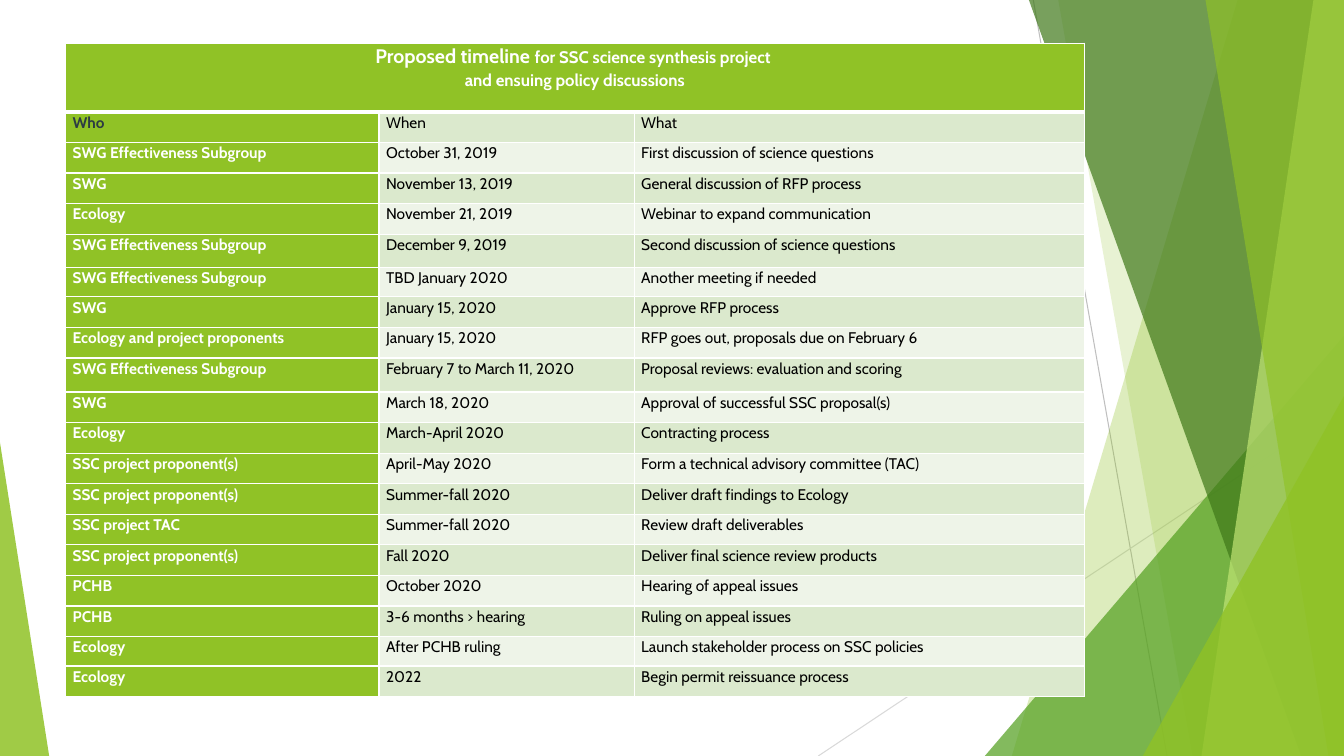
"""Build the project timeline slide: a schedule table over green facets."""
from lxml.etree import SubElement
from pptx import Presentation
from pptx.dml.color import RGBColor
from pptx.enum.shapes import MSO_CONNECTOR, MSO_SHAPE
from pptx.enum.text import PP_ALIGN
from pptx.oxml.ns import qn
from pptx.util import Cm, Pt

FONT = "Cabin"
WHITE = RGBColor(0xFF, 0xFF, 0xFF)
BLACK = RGBColor(0x00, 0x00, 0x00)
SLATE = RGBColor(0x2C, 0x3C, 0x43)
LIME = RGBColor(0x90, 0xC2, 0x26)
LEAF = RGBColor(0x54, 0xA0, 0x21)
FOREST = RGBColor(0x3F, 0x78, 0x19)
PALE_LIME = RGBColor(0xC0, 0xE4, 0x74)
BAND_DARK = RGBColor(0xDB, 0xE9, 0xCD)
BAND_LIGHT = RGBColor(0xEE, 0xF4, 0xE8)
GRAY = RGBColor(0xBF, 0xBF, 0xBF)
LIGHT_GRAY = RGBColor(0xD9, 0xD9, 0xD9)

HEADING = [
    ("Proposed timeline ", 14),
    ("for SSC science synthesis project ", 12),
    ("and ensuing policy discussions", 12),
]
SCHEDULE = [
    ("Who", "When", "What"),
    ("SWG Effectiveness Subgroup", "October 31, 2019", "First discussion of science questions"),
    ("SWG", "November 13, 2019", "General discussion of RFP process"),
    ("Ecology", "November 21, 2019", "Webinar to expand communication"),
    ("SWG Effectiveness Subgroup", "December 9, 2019", "Second discussion of science questions"),
    ("SWG Effectiveness Subgroup", "TBD January 2020", "Another meeting if needed"),
    ("SWG", "January 15, 2020", "Approve RFP process"),
    ("Ecology and project proponents", "January 15, 2020", "RFP goes out, proposals due on February 6"),
    ("SWG Effectiveness Subgroup", "February 7 to March 11, 2020", "Proposal reviews: evaluation and scoring"),
    ("SWG", "March 18, 2020", "Approval of successful SSC proposal(s)"),
    ("Ecology", "March-April 2020", "Contracting process"),
    ("SSC project proponent(s)", "April-May 2020", "Form a technical advisory committee (TAC)"),
    ("SSC project proponent(s)", "Summer-fall 2020", "Deliver draft findings to Ecology"),
    ("SSC project TAC", "Summer-fall 2020", "Review draft deliverables"),
    ("SSC project proponent(s)", "Fall 2020", "Deliver final science review products"),
    ("PCHB", "October 2020", "Hearing of appeal issues"),
    ("PCHB", "3-6 months > hearing", "Ruling on appeal issues"),
    ("Ecology", "After PCHB ruling", "Launch stakeholder process on SSC policies"),
    ("Ecology", "2022", "Begin permit reissuance process"),
]
WIDTH, HEIGHT = 33.87, 19.05
COLUMN_WIDTHS = (7.9, 6.43, 11.35)
ROW_HEIGHT = 0.77
SPECIAL_HEIGHTS = {0: 1.73, 5: 0.84, 6: 0.74, 9: 0.86, 18: 0.74}

RAYS = [
    ((26.04, 0), (29.41, HEIGHT), GRAY),
    ((WIDTH, 10.24), (20.62, HEIGHT), LIGHT_GRAY),
]
# Facets run from a top x and a bottom x to the right edge; triangles list left, top, apex.
FACETS = [
    ("facet", (31.19, 25.5), LIME, 30),
    ("facet", (26.67, 30.05), LIME, 20),
    ("triangle", (24.82, 8.46, 9.05, 1), LEAF, 72),
    ("facet", (25.93, 32.79), FOREST, 70),
    ("facet", (33.1, 30.28), PALE_LIME, 70),
    ("facet", (30.38, 33.48), LIME, 65),
    ("triangle", (28.8, 9.98, 5.07, 1), LIME, 80),
    ("triangle", (0, 11.15, 1.24, 0), LIME, 85),
]


def add_ray(slide, start, end, color):
    ray = slide.shapes.add_connector(MSO_CONNECTOR.STRAIGHT, *map(Cm, start + end))
    ray.line.color.rgb = color
    ray.line.width = Pt(0.75)
    SubElement(ray.element.spPr, qn("a:effectLst"))


def add_facet(slide, kind, geometry, color, opacity):
    if kind == "facet":
        top_x, bottom_x = geometry
        builder = slide.shapes.build_freeform(Cm(top_x), 0)
        corners = [(WIDTH, 0), (WIDTH, HEIGHT), (bottom_x, HEIGHT)]
        builder.add_line_segments([(Cm(x), Cm(y)) for x, y in corners], close=True)
        shape = builder.convert_to_shape()
    else:
        left, top, width, apex = geometry
        shape = slide.shapes.add_shape(
            MSO_SHAPE.ISOSCELES_TRIANGLE, Cm(left), Cm(top), Cm(width), Cm(HEIGHT - top))
        shape.adjustments[0] = apex
    shape.shadow.inherit = False
    shape.line.fill.background()
    shape.fill.solid()
    shape.fill.fore_color.rgb = color
    tint = shape.element.spPr.find(".//" + qn("a:srgbClr"))
    SubElement(tint, qn("a:alpha"), val=str(opacity * 1000))


def format_cell(cell, row, column):
    cell.margin_left = cell.margin_right = Cm(0.18)
    cell.margin_top = cell.margin_bottom = 0
    widths = {"a:lnL": 1, "a:lnR": 1, "a:lnT": 3 if row == 1 else 1, "a:lnB": 3 if row == 0 else 1}
    properties = cell._tc.get_or_add_tcPr()
    for side, width in widths.items():
        border = SubElement(properties, qn(side), w=str(Pt(width)))
        SubElement(SubElement(border, qn("a:solidFill")), qn("a:srgbClr"), val=str(WHITE))
    cell.fill.solid()
    band = BAND_DARK if row % 2 else BAND_LIGHT
    cell.fill.fore_color.rgb = LIME if row == 0 or column == 0 else band


def format_paragraph(para, color, bold):
    para.line_spacing = 1.07
    para.font.name = FONT
    para.font.size = Pt(11)
    para.font.bold = bold
    para.font.color.rgb = color


def add_schedule(slide):
    heights = [SPECIAL_HEIGHTS.get(row, ROW_HEIGHT) for row in range(len(SCHEDULE) + 1)]
    frame = slide.shapes.add_table(
        len(heights), len(COLUMN_WIDTHS), Cm(1.65), Cm(1.09),
        Cm(sum(COLUMN_WIDTHS)), Cm(sum(heights)))
    table = frame.table
    table.horz_banding = False
    table.first_row = False
    for column, width in zip(table.columns, COLUMN_WIDTHS):
        column.width = Cm(width)
    for row, height in enumerate(heights):
        table.rows[row].height = Cm(height)
        for column in range(len(COLUMN_WIDTHS)):
            format_cell(table.cell(row, column), row, column)

    table.cell(0, 0).merge(table.cell(0, len(COLUMN_WIDTHS) - 1))
    para = table.cell(0, 0).text_frame.paragraphs[0]
    format_paragraph(para, WHITE, True)
    para.alignment = PP_ALIGN.CENTER
    for index, (text, size) in enumerate(HEADING):
        if index == len(HEADING) - 1:
            para.add_line_break()
        span = para.add_run()
        span.text = text
        span.font.size = Pt(size)

    for row, entry in enumerate(SCHEDULE, start=1):
        for column, text in enumerate(entry):
            para = table.cell(row, column).text_frame.paragraphs[0]
            para.text = text
            who_color = SLATE if row == 1 else WHITE
            format_paragraph(para, BLACK if column else who_color, column == 0)


def main():
    deck = Presentation()
    deck.slide_width, deck.slide_height = Cm(WIDTH), Cm(HEIGHT)
    slide = deck.slides.add_slide(deck.slide_layouts[6])
    for ray in RAYS:
        add_ray(slide, *ray)
    for facet in FACETS:
        add_facet(slide, *facet)
    add_schedule(slide)
    deck.save("out.pptx")


if __name__ == "__main__":
    main()
